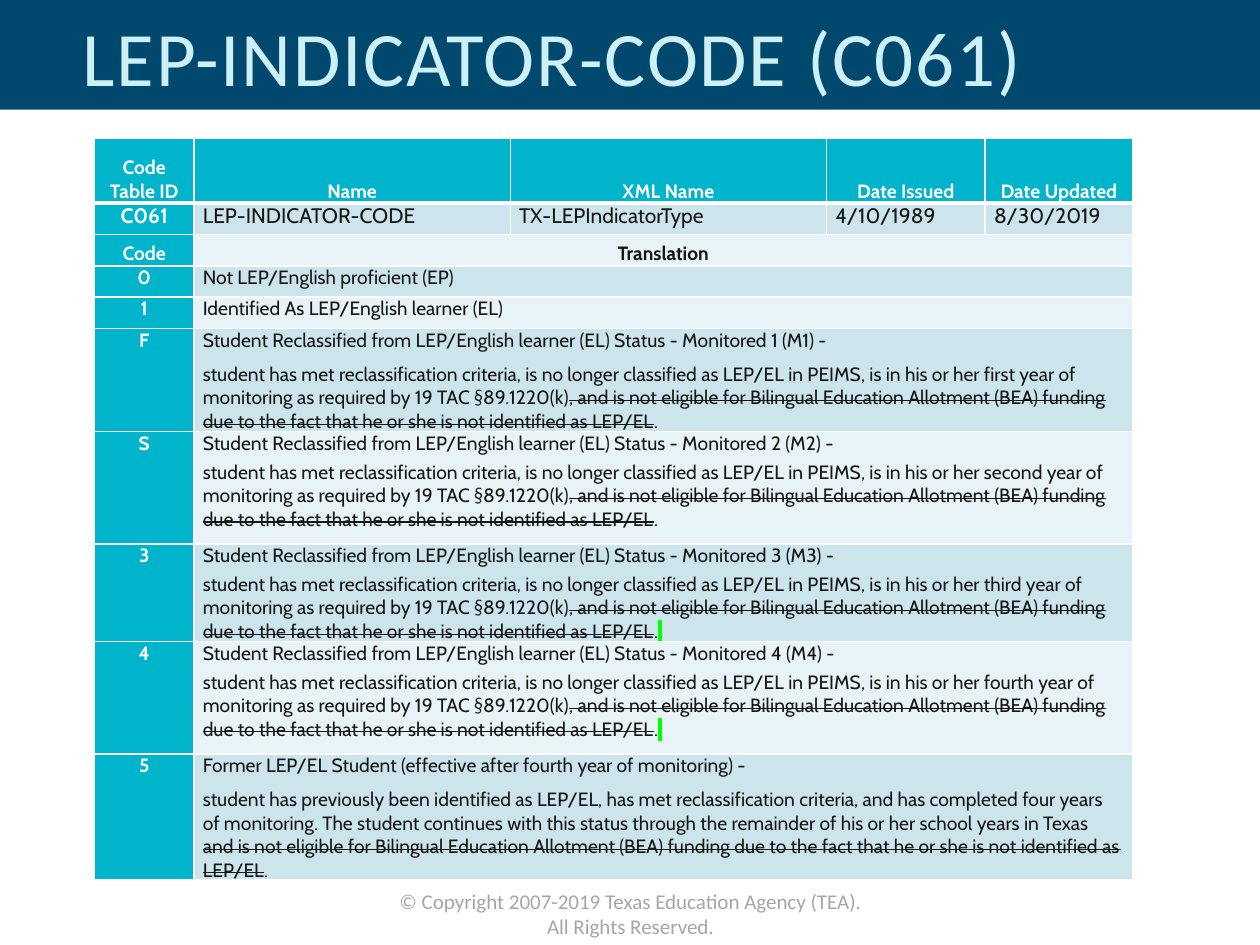
from dataclasses import dataclass

from lxml import etree
from pptx import Presentation
from pptx.dml.color import RGBColor
from pptx.enum.shapes import MSO_SHAPE
from pptx.enum.text import MSO_ANCHOR, PP_ALIGN
from pptx.oxml.ns import qn
from pptx.util import Inches, Pt

RECTANGLE = MSO_SHAPE.RECTANGLE
TOP, MIDDLE, BOTTOM = MSO_ANCHOR.TOP, MSO_ANCHOR.MIDDLE, MSO_ANCHOR.BOTTOM
LEFT, CENTER = PP_ALIGN.LEFT, PP_ALIGN.CENTER


@dataclass(frozen=True)
class Theme:
    navy: str = "00486E"
    teal: str = "00B5CB"
    pale: str = "CCF0F5"
    dark_band: str = "CCE5EC"
    light_band: str = "E7F3F6"
    white: str = "FFFFFF"
    ink: str = "171616"
    gray: str = "A6A6A6"
    marker: str = "00FF00"
    heading_font: str = "Calibri"
    table_font: str = "Cabin"
    title_size: int = 44
    record_size: int = 12
    footer_size: int = 12
    table_size: int = 11
    thin_line: int = 1
    thick_line: int = 3


THEME = Theme()
SLIDE_WIDTH, SLIDE_HEIGHT = Inches(10), Inches(7.5)
GRID_COLUMN, GRID_ROW = SLIDE_WIDTH / 100, SLIDE_HEIGHT / 100
COLUMN_WIDTHS = (7.9, 25.1, 25.1, 12.6, 11.7)
HEADER_HEIGHT, SHORT_HEIGHT = 6.8, 3.33
CELL_MARGIN = 0.7
GAP = 3


@dataclass(frozen=True)
class Area:
    column: float
    row: float
    columns: float
    rows: float

    def box(self) -> tuple[int, int, int, int]:
        return (int(self.column * GRID_COLUMN), int(self.row * GRID_ROW),
                int(self.columns * GRID_COLUMN), int(self.rows * GRID_ROW))


@dataclass(frozen=True)
class Style:
    size: int
    color: str
    font: str = THEME.table_font
    bold: bool = False
    align: PP_ALIGN = LEFT


@dataclass(frozen=True)
class Code:
    code: str
    heading: str
    height: float = SHORT_HEIGHT
    body: str = ""
    struck: str = ""
    space_before: int = 0
    marked: bool = False


LABEL = Style(THEME.table_size, THEME.white, bold=True, align=CENTER)
RECORD_LABEL = Style(THEME.record_size, THEME.white, bold=True, align=CENTER)
RECORD = Style(THEME.record_size, THEME.ink)
TRANSLATION_LABEL = Style(THEME.table_size, THEME.ink, bold=True, align=CENTER)
TRANSLATION = Style(THEME.table_size, THEME.ink)
TITLE = Style(THEME.title_size, THEME.pale, THEME.heading_font)
FOOTER = Style(THEME.footer_size, THEME.gray, THEME.heading_font, align=CENTER)

HEADERS = ("Code Table ID", "Name", "XML Name", "Date Issued", "Date Updated")
RECORD_VALUES = ("C061", "LEP-INDICATOR-CODE", "TX-LEPIndicatorType", "4/10/1989", "8/30/2019")
NOT_ELIGIBLE = ("and is not eligible for Bilingual Education Allotment (BEA) funding due to "
                "the fact that he or she is not identified as LEP/EL")


def monitored(code: str, year: int, ordinal: str, height: float,
              space_before: int = 0, marked: bool = False) -> Code:
    heading = (f"Student Reclassified from LEP/English learner (EL) Status - "
               f"Monitored {year} (M{year}) -")
    body = (f"student has met reclassification criteria, is no longer classified as LEP/EL "
            f"in PEIMS, is in his or her {ordinal} year of monitoring as required by "
            f"19 TAC §89.1220(k)")
    return Code(code, heading, height, body, f", {NOT_ELIGIBLE}", space_before, marked)


CODES = (
    Code("0", "Not LEP/English proficient (EP)"),
    Code("1", "Identified As LEP/English learner (EL)"),
    monitored("F", 1, "first", 10.53, GAP),
    monitored("S", 2, "second", 11.87),
    monitored("3", 3, "third", 10, marked=True),
    monitored("4", 4, "fourth", 11.87, marked=True),
    Code("5", "Former LEP/EL Student (effective after fourth year of monitoring) -", 12.53,
         "student has previously been identified as LEP/EL, has met reclassification criteria, "
         "and has completed four years of monitoring. The student continues with this status "
         "through the remainder of his or her school years in Texas ",
         NOT_ELIGIBLE, GAP),
)


def apply_style(paragraph, style: Style) -> None:
    paragraph.alignment = style.align
    paragraph.font.name = style.font
    paragraph.font.size = Pt(style.size)
    paragraph.font.bold = style.bold
    paragraph.font.color.rgb = RGBColor.from_string(style.color)


def add_text(slide, area: Area, text: str, style: Style, anchor: MSO_ANCHOR):
    frame = slide.shapes.add_textbox(*area.box()).text_frame
    frame.word_wrap = True
    frame.vertical_anchor = anchor
    paragraph = frame.paragraphs[0]
    paragraph.add_run().text = text
    apply_style(paragraph, style)
    return paragraph


def set_borders(cell, top: int, bottom: int) -> None:
    properties = cell._tc.get_or_add_tcPr()
    widths = {"a:lnL": THEME.thin_line, "a:lnR": THEME.thin_line, "a:lnT": top, "a:lnB": bottom}
    for tag, width in widths.items():
        line = etree.SubElement(properties, qn(tag), w=str(Pt(width)))
        fill = etree.SubElement(line, qn("a:solidFill"))
        etree.SubElement(fill, qn("a:srgbClr"), val=THEME.white)


def fill_cell(cell, text: str, style: Style, fill: str, anchor: MSO_ANCHOR = TOP,
              top: int = THEME.thin_line, bottom: int = THEME.thin_line) -> None:
    set_borders(cell, top, bottom)
    cell.fill.solid()
    cell.fill.fore_color.rgb = RGBColor.from_string(fill)
    cell.vertical_anchor = anchor
    cell.margin_left = cell.margin_right = int(CELL_MARGIN * GRID_COLUMN)
    cell.margin_top = cell.margin_bottom = 0
    paragraph = cell.text_frame.paragraphs[0]
    paragraph.add_run().text = text
    apply_style(paragraph, style)


def add_explanation(cell, code: Code) -> None:
    paragraph = cell.text_frame.add_paragraph()
    paragraph.space_before = paragraph.space_after = Pt(code.space_before)
    paragraph.add_run().text = code.body
    struck = paragraph.add_run()
    struck.text = code.struck
    struck._r.get_or_add_rPr().set("strike", "sngStrike")
    paragraph.add_run().text = "."
    if code.marked:
        marker = paragraph.add_run()
        marker.text = " "
        highlight = etree.SubElement(marker._r.get_or_add_rPr(), qn("a:highlight"))
        etree.SubElement(highlight, qn("a:srgbClr"), val=THEME.marker)
    apply_style(paragraph, TRANSLATION)


def add_code_table(slide, area: Area) -> None:
    heights = [HEADER_HEIGHT, SHORT_HEIGHT, SHORT_HEIGHT] + [code.height for code in CODES]
    table = slide.shapes.add_table(len(heights), len(COLUMN_WIDTHS), *area.box()).table
    table.first_row = table.horz_banding = False
    for column, width in zip(table.columns, COLUMN_WIDTHS):
        column.width = int(width * GRID_COLUMN)
    for row, height in zip(table.rows, heights):
        row.height = int(height * GRID_ROW)

    for index, (header, value) in enumerate(zip(HEADERS, RECORD_VALUES)):
        fill_cell(table.cell(0, index), header, LABEL, THEME.teal, BOTTOM,
                  bottom=THEME.thick_line)
        style, fill = (RECORD, THEME.dark_band) if index else (RECORD_LABEL, THEME.teal)
        fill_cell(table.cell(1, index), value, style, fill, top=THEME.thick_line)

    for row in range(2, len(heights)):
        table.cell(row, 1).merge(table.cell(row, len(COLUMN_WIDTHS) - 1))
    fill_cell(table.cell(2, 0), "Code", LABEL, THEME.teal, BOTTOM)
    fill_cell(table.cell(2, 1), "Translation", TRANSLATION_LABEL, THEME.light_band, BOTTOM)

    for row, code in enumerate(CODES, start=3):
        band = THEME.dark_band if row % 2 else THEME.light_band
        fill_cell(table.cell(row, 0), code.code, LABEL, THEME.teal)
        translation = table.cell(row, 1)
        fill_cell(translation, code.heading, TRANSLATION, band)
        for cell in (table.cell(row, 0), translation):
            cell.text_frame.paragraphs[0].space_after = Pt(GAP)
        if code.body:
            add_explanation(translation, code)


def main() -> None:
    presentation = Presentation()
    presentation.slide_width, presentation.slide_height = SLIDE_WIDTH, SLIDE_HEIGHT
    slide = presentation.slides.add_slide(presentation.slide_layouts[6])

    banner = slide.shapes.add_shape(RECTANGLE, *Area(0, 0, 100, 11.6).box())
    banner.shadow.inherit = False
    banner.fill.solid()
    banner.fill.fore_color.rgb = RGBColor.from_string(THEME.navy)
    banner.line.fill.background()

    add_text(slide, Area(30.4, 93.33, 39.3, 4), "© Copyright 2007-2019 Texas Education Agency "
             "(TEA). All Rights Reserved.", FOOTER, TOP)
    title = add_text(slide, Area(5.6, 0.67, 81.3, 11.6), "LEP-INDICATOR-CODE (C061)",
                     TITLE, MIDDLE)
    title.line_spacing = 0.9
    title.runs[0]._r.get_or_add_rPr().set("spc", "100")
    add_code_table(slide, Area(7.5, 14.67, sum(COLUMN_WIDTHS), 77.6))
    presentation.save("out.pptx")


if __name__ == "__main__":
    main()
